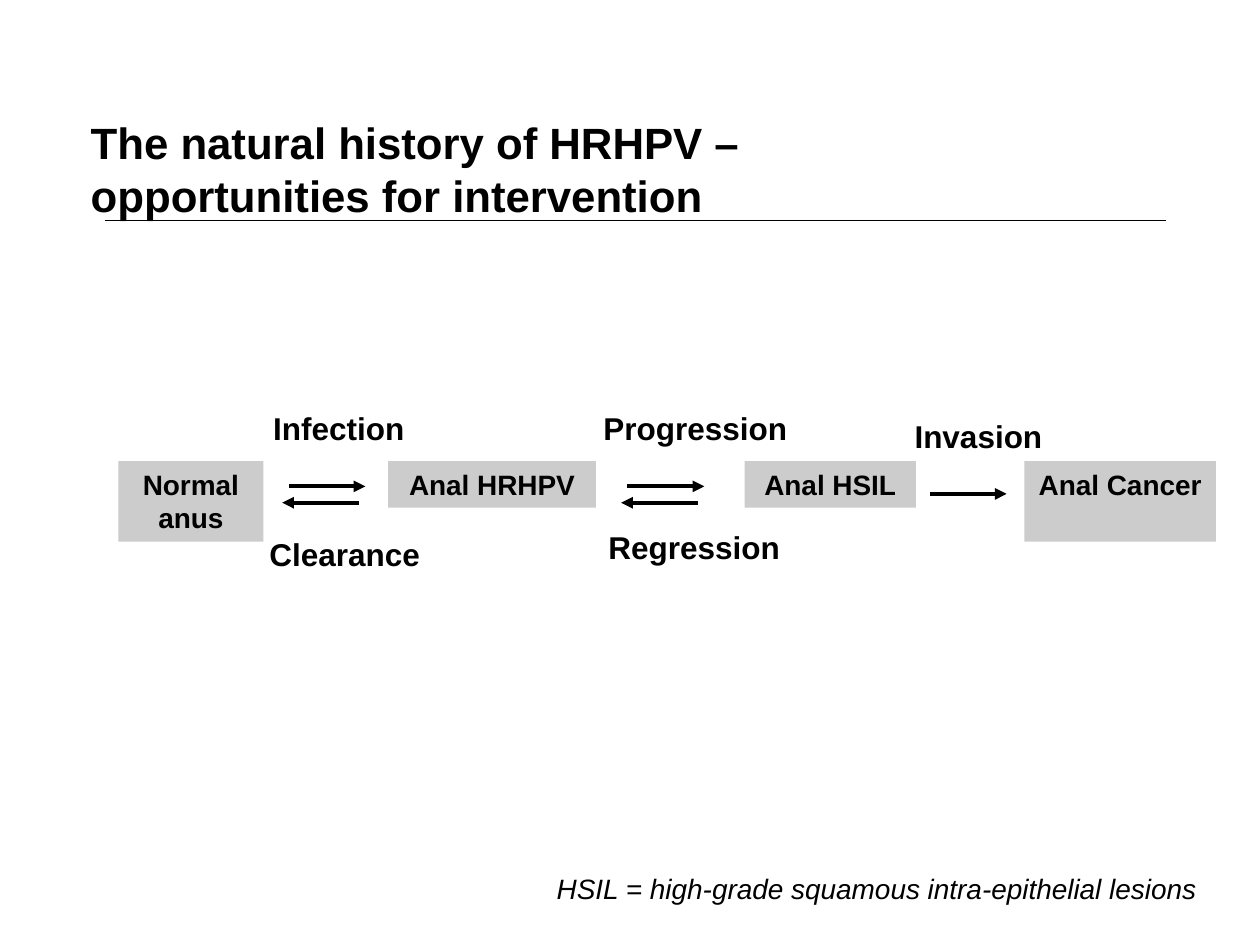
from lxml import etree
from pptx import Presentation
from pptx.dml.color import RGBColor
from pptx.enum.shapes import MSO_CONNECTOR, MSO_SHAPE
from pptx.enum.text import MSO_ANCHOR, MSO_AUTO_SIZE, PP_ALIGN
from pptx.oxml.ns import qn
from pptx.util import Inches, Pt

LEFT, CENTER = PP_ALIGN.LEFT, PP_ALIGN.CENTER
TOP = MSO_ANCHOR.TOP
FIXED = MSO_AUTO_SIZE.NONE
RECT = MSO_SHAPE.RECTANGLE
STRAIGHT = MSO_CONNECTOR.STRAIGHT

FONT = "Arial"
COLORS = {"ink": "000000", "stage": "CCCCCC"}
ROW = 3.66
FORTH, BACK, MID = ROW + 0.2, ROW + 0.33, ROW + 0.26
REACH = 0.61
SHORT, TALL = 0.37, 0.64

STAGES = [
    ("Normal anus", 0.94, 1.15, TALL),
    ("Anal HRHPV", 3.08, 1.65, SHORT),
    ("Anal HSIL", 5.91, 1.36, SHORT),
    ("Anal Cancer", 8.13, 1.52, TALL),
]
LABELS = [
    ("Infection", 2.07, 3.2, 1.31),
    ("Clearance", 2.04, 4.2, 1.47),
    ("Progression", 4.69, 3.2, 1.75),
    ("Regression", 4.73, 4.14, 1.65),
    ("Invasion", 7.16, 3.26, 1.28),
]
PAIRS = [2.29, 4.98]


def color(name):
    return RGBColor.from_string(COLORS[name])


def write(shape, text, size, align=LEFT, bold=True, italic=False):
    frame = shape.text_frame
    frame.text = text
    frame.word_wrap = True
    frame.auto_size = FIXED
    frame.vertical_anchor = TOP
    for para in frame.paragraphs:
        para.alignment = align
        for run in para.runs:
            font = run.font
            font.name, font.size = FONT, Pt(size)
            font.bold, font.italic = bold, italic
            font.color.rgb = color("ink")


def add_title(slide, text):
    title = slide.shapes.title
    title.left, title.top = Inches(0.62), Inches(0.84)
    title.width, title.height = Inches(8.97), Inches(0.67)
    write(title, text, 25)
    title.text_frame.margin_top = Inches(0.08)


def add_stage(slide, text, left, width, height):
    box = slide.shapes.add_shape(
        RECT, Inches(left), Inches(ROW), Inches(width), Inches(height))
    box.shadow.inherit = False
    box.fill.solid()
    box.fill.fore_color.rgb = color("stage")
    box.line.fill.background()
    write(box, text, 16, CENTER)


def add_label(slide, text, left, top, width, size=18, **style):
    box = slide.shapes.add_textbox(
        Inches(left), Inches(top), Inches(width), Inches(0.4))
    write(box, text, size, **style)


def add_line(slide, start, end, y, weight, head=True):
    line = slide.shapes.add_connector(
        STRAIGHT, Inches(start), Inches(y), Inches(end), Inches(y))
    line.line.color.rgb = color("ink")
    line.line.width = Pt(weight)
    if head:
        tail = etree.SubElement(line.line._get_or_add_ln(), qn("a:tailEnd"))
        tail.set("type", "triangle")
    etree.SubElement(line._element.spPr, qn("a:effectLst"))


def main():
    deck = Presentation()
    deck.slide_width, deck.slide_height = Inches(10), Inches(7.5)
    slide = deck.slides.add_slide(deck.slide_layouts[5])
    add_line(slide, 0.83, 9.25, 1.75, 0.75, head=False)
    add_title(slide, "The natural history of HRHPV –\vopportunities for intervention")
    for stage in STAGES:
        add_stage(slide, *stage)
    for x in PAIRS:
        add_line(slide, x, x + REACH, FORTH, 2.25)
        add_line(slide, x - 0.05 + REACH, x - 0.05, BACK, 2.25)
    add_line(slide, 7.38, 7.38 + REACH, MID, 2.25)
    for label in LABELS:
        add_label(slide, *label)
    add_label(slide, "HSIL = high-grade squamous intra-epithelial lesions",
              4.32, 6.87, 5.34, size=16, bold=False, italic=True)
    deck.save("out.pptx")


if __name__ == "__main__":
    main()
